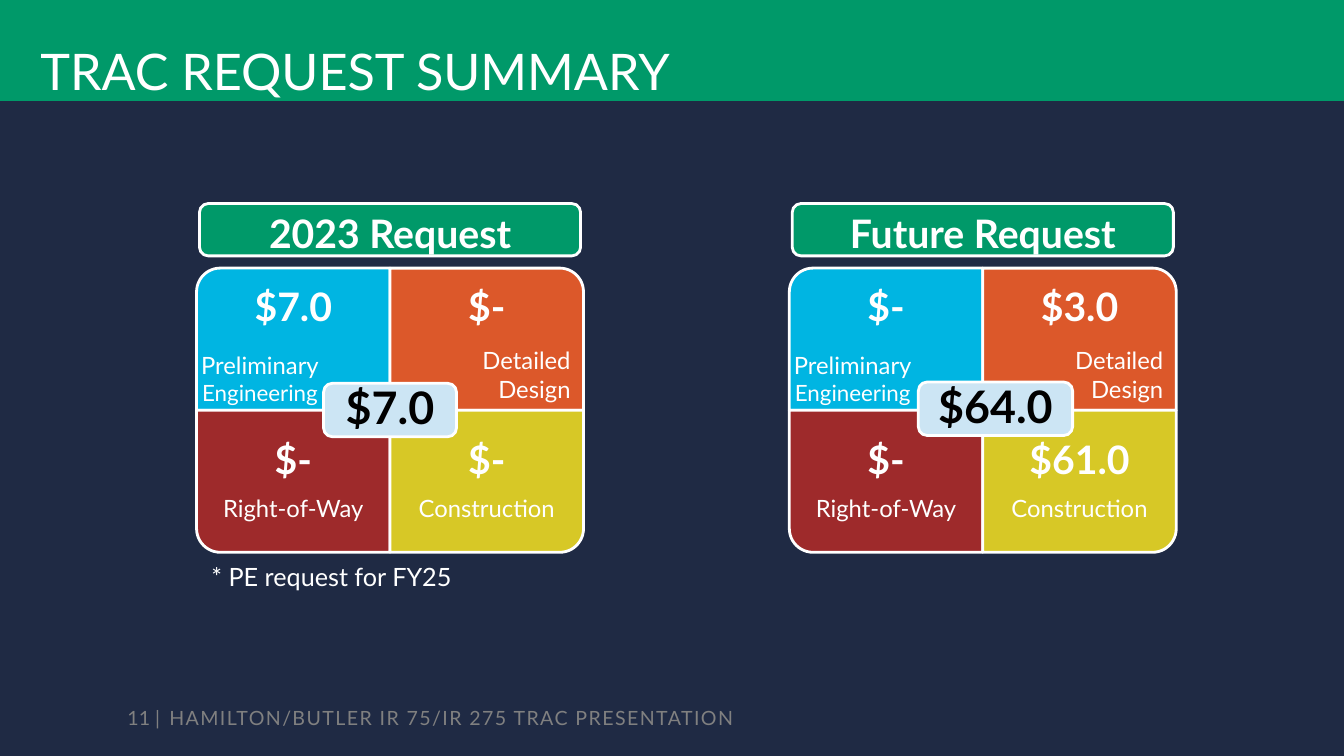
import pptx
import pptx.util
import pptx.dml.color
import pptx.enum.shapes
import pptx.enum.text

Pt = pptx.util.Pt
RGBColor = pptx.dml.color.RGBColor
SHAPE = pptx.enum.shapes.MSO_SHAPE
ALIGN = pptx.enum.text.PP_ALIGN
ANCHOR = pptx.enum.text.MSO_ANCHOR

NAVY = RGBColor(0x1F, 0x2A, 0x44)
GREEN = RGBColor(0x00, 0x99, 0x69)
CYAN = RGBColor(0x00, 0xB5, 0xE2)
ORANGE = RGBColor(0xDC, 0x58, 0x2A)
RED = RGBColor(0x9E, 0x2A, 0x2B)
YELLOW = RGBColor(0xD7, 0xC8, 0x26)
PALE_BLUE = RGBColor(0xCC, 0xE5, 0xF4)
WHITE = RGBColor(0xFF, 0xFF, 0xFF)
BLACK = RGBColor(0x00, 0x00, 0x00)
GREY = RGBColor(0x80, 0x80, 0x80)

TITLE = "TRAC REQUEST SUMMARY"
PAGE = "11 |"
FOOTER = "HAMILTON/BUTLER IR 75/IR 275 TRAC PRESENTATION"
FOOTNOTE = "* PE request for FY25"

# Amounts follow the order of QUADRANTS; badge is offset from the panel's left, top, width
REQUESTS = [
    {"heading": "2023 Request", "left": 140.4, "total": "$7.0",
     "amounts": ["$7.0", "$-", "$-", "$-"], "badge": (90.7, 273.8, 95)},
    {"heading": "Future Request", "left": 563.8, "total": "$64.0",
     "amounts": ["$-", "$3.0", "$-", "$61.0"], "badge": (92.2, 272.9, 110.2)},
]
# Column, row, rotation that turns the round corner outwards, fill, label under the amount
QUADRANTS = [
    (0, 0, 270, CYAN, None),
    (1, 0, 0, ORANGE, None),
    (0, 1, 180, RED, "Right-of-Way"),
    (1, 1, 90, YELLOW, "Construction"),
]
# Offset from the panel's left, top, width, alignment, lines with their sizes
CORNER_LABELS = [
    (-5.8, 247, 102.2, ALIGN.CENTER, [("Preliminary", 17), ("Engineering", 16)]),
    (195.1, 243.4, 79.2, ALIGN.RIGHT, [("Detailed", 17), ("Design", 17)]),
]

CELL_W, CELL_H = 138.2, 101.5
PANEL_TOP = 191.5
AMOUNT_OFFSETS = (10.2, 18)  # from the cell's top, by row
HEADING_W, HEADING_H, HEADING_TOP = 272.2, 37.4, 145.4
BADGE_H = 38.2


def prepare_frame(shape, anchor=ANCHOR.TOP, insets=(0, 0, 0, 0), wrap=True):
    frame = shape.text_frame
    frame.auto_size = pptx.enum.text.MSO_AUTO_SIZE.NONE
    frame.word_wrap = wrap
    frame.vertical_anchor = anchor
    (frame.margin_left, frame.margin_top,
     frame.margin_right, frame.margin_bottom) = [Pt(inset) for inset in insets]
    return frame


def write(frame, text, size=17, color=WHITE, bold=False, align=ALIGN.CENTER, after=0, tracking=0):
    """Fill the first paragraph if it is empty, otherwise append one."""
    paragraph = frame.paragraphs[0]
    if paragraph.runs:
        paragraph = frame.add_paragraph()
    paragraph.alignment = align
    paragraph.space_before = Pt(0)
    paragraph.space_after = Pt(after)
    run = paragraph.add_run()
    run.text = text
    run.font.name = "Lato"
    run.font.size = Pt(size)
    run.font.bold = bold
    run.font.color.rgb = color
    if tracking:
        run.font._element.set("spc", str(tracking * 100))


def add_text_frame(left, top, width, height, **frame_format):
    box = slide.shapes.add_textbox(Pt(left), Pt(top), Pt(width), Pt(height))
    return prepare_frame(box, **frame_format)


def add_outlined(kind, left, top, width, height, fill, rotation=0):
    """Add a white-edged shape that covers the given area after its rotation."""
    if rotation % 180:
        left, top = left + (width - height) / 2, top + (height - width) / 2
        width, height = height, width
    shape = slide.shapes.add_shape(kind, Pt(left), Pt(top), Pt(width), Pt(height))
    shape.rotation = rotation
    shape.shadow.inherit = False
    shape.fill.solid()
    shape.fill.fore_color.rgb = fill
    shape.line.color.rgb = WHITE
    shape.line.width = Pt(2)
    return shape


def add_request(heading, left, total, amounts, badge):
    for (column, row, rotation, fill, label), amount in zip(QUADRANTS, amounts):
        x, y = left + column * CELL_W, PANEL_TOP + row * CELL_H
        add_outlined(SHAPE.ROUND_1_RECTANGLE, x, y, CELL_W, CELL_H, fill, rotation)
        offset = AMOUNT_OFFSETS[row]
        frame = add_text_frame(x, y + offset, CELL_W, CELL_H - offset)
        write(frame, amount, size=28, bold=True, after=8.2 if label else 0)
        if label:
            write(frame, label)

    badge_dx, badge_top, badge_w = badge
    total_box = add_outlined(SHAPE.ROUNDED_RECTANGLE, left + badge_dx, badge_top,
                             badge_w, BADGE_H, PALE_BLUE)
    frame = prepare_frame(total_box, anchor=ANCHOR.MIDDLE, insets=(0, 0, 0, 4.6))
    write(frame, total, size=32, color=BLACK, bold=True)

    for dx, top, width, align, lines in CORNER_LABELS:
        frame = add_text_frame(left + dx, top, width, 48, insets=(7.2, 3.6, 7.2, 3.6), wrap=False)
        for text, size in lines:
            write(frame, text, size=size, align=align)

    heading_box = add_outlined(SHAPE.ROUNDED_RECTANGLE, left + CELL_W - HEADING_W / 2,
                               HEADING_TOP, HEADING_W, HEADING_H, GREEN)
    frame = prepare_frame(heading_box, anchor=ANCHOR.MIDDLE, insets=(0, 4, 0, 0))
    write(frame, heading, size=28, bold=True)


deck = pptx.Presentation()
deck.slide_width, deck.slide_height = Pt(960), Pt(540)
slide = deck.slides.add_slide(deck.slide_layouts[5])
slide.background.fill.solid()
slide.background.fill.fore_color.rgb = NAVY

title = slide.shapes.title
title.left, title.top, title.width, title.height = Pt(0), Pt(0), Pt(960), Pt(72)
title.fill.solid()
title.fill.fore_color.rgb = GREEN
write(prepare_frame(title, anchor=ANCHOR.BOTTOM, insets=(28.8, 7.2, 28.8, 0)),
      TITLE, size=36, align=ALIGN.LEFT)

for request in REQUESTS:
    add_request(**request)

write(add_text_frame(144, 397.4, 191.5, 29, insets=(7.2, 3.6, 7.2, 3.6), wrap=False),
      FOOTNOTE, size=18, align=ALIGN.LEFT)
write(add_text_frame(77, 498.2, 37.4, 28.8, anchor=ANCHOR.MIDDLE, wrap=False),
      PAGE, size=14, color=GREY, align=ALIGN.RIGHT)
write(add_text_frame(113.8, 498.2, 610.6, 28.8, anchor=ANCHOR.MIDDLE, insets=(7.2, 3.6, 7.2, 3.6)),
      FOOTER, size=14, color=GREY, align=ALIGN.LEFT, tracking=1)

deck.save("out.pptx")
